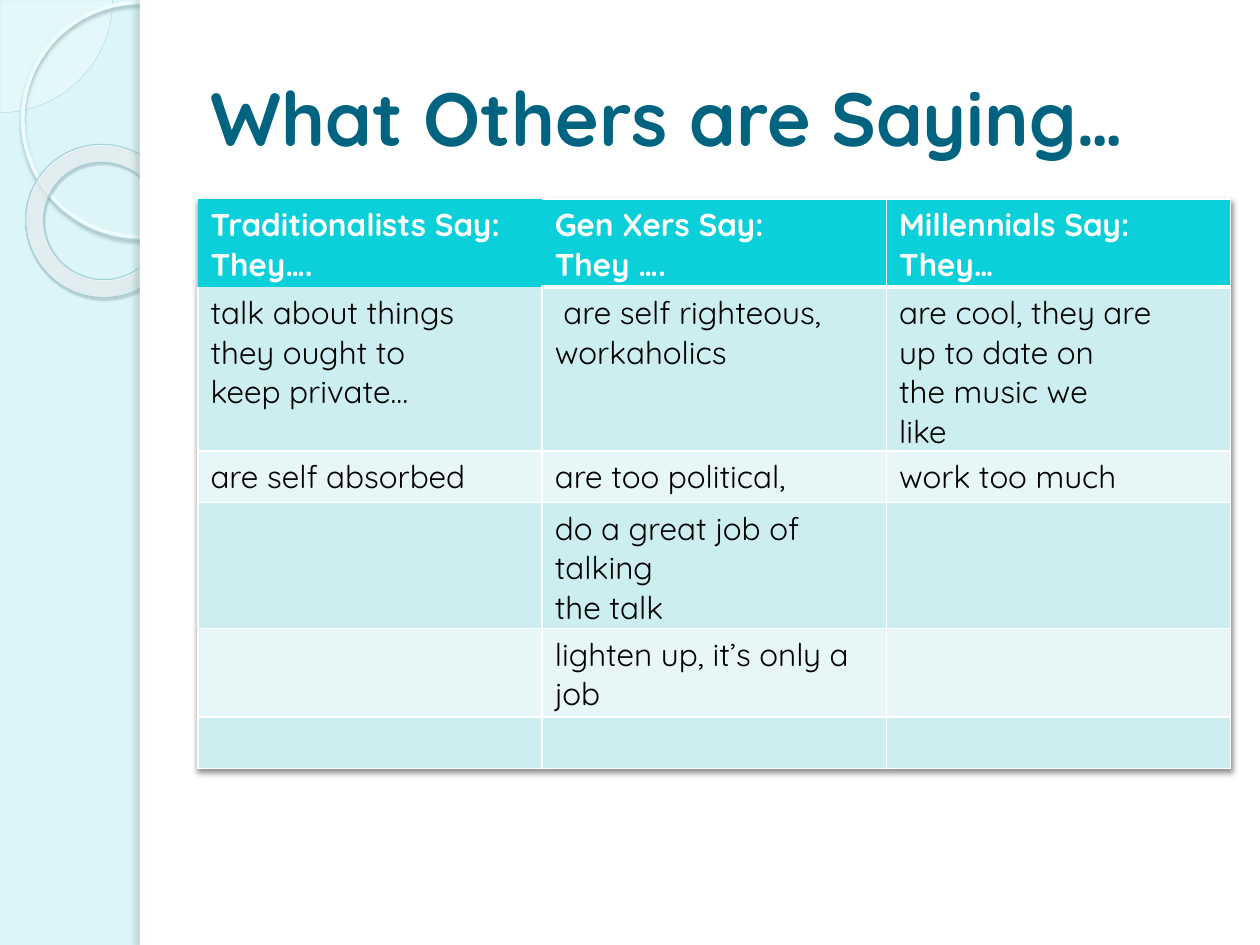
"""Build the "What Others are Saying…" slide with its comparison table."""
from dataclasses import dataclass
from typing import Optional

from lxml import etree
from pptx import Presentation
from pptx import util as u
from pptx.dml.color import RGBColor
from pptx.enum import shapes, text
from pptx.oxml import ns

FONT = "Quicksand"
WHITE = "FFFFFF"
HEADER_FILL = "0BD0D9"
BAND_FILLS = ("E7F7F8", "CCEEF1")
ROWS = (
    ("Traditionalists Say:\nThey….", "Gen Xers Say:\nThey ….", "Millennials Say:\nThey…"),
    ("talk about things\nthey ought to\nkeep private…", " are self righteous,\nworkaholics",
     "are cool, they are\nup to date on\nthe music we\nlike"),
    ("are self absorbed", "are too political,", "work too much"),
    ("", "do a great job of talking\nthe talk", ""),
    ("", "lighten up, it’s only a job", ""),
    ("", "", ""),
)


@dataclass(frozen=True)
class Shadow:
    color: str
    alpha: int
    blur: float
    distance: float
    angle: int


@dataclass(frozen=True)
class Decoration:
    kind: shapes.MSO_SHAPE
    place: tuple[float, float, float, float]
    fill: Optional[str] = None
    alpha: int = 100
    line: Optional[str] = None
    line_width: float = 0
    shadow: Optional[Shadow] = None
    adjustments: tuple[float, ...] = ()
    rotation: float = 0
    gradient: tuple[tuple[int, str, int], ...] = ()


DECORATIONS = (
    Decoration(shapes.MSO_SHAPE.PIE, (-2.27, -2.27, 4.54, 4.54), "F8FEFF", 33,
               "AFDBE2", 0.25, adjustments=(0, 54)),
    Decoration(shapes.MSO_SHAPE.OVAL, (0.46, 0.05, 4.72, 4.72), line="EDFCFF",
               line_width=2.15, shadow=Shadow("9CB9BE", 85, 2, 2, 90)),
    Decoration(shapes.MSO_SHAPE.DONUT, (0.51, 2.92, 3.12, 3.07), line="A1CFD6",
               line_width=0.58, shadow=Shadow("4B5E61", 35, 1, 1.2, 75),
               adjustments=(0.118,), rotation=38.6,
               gradient=((0, "F9FEFF", 70), (70, "FDFFFF", 55), (100, "9EF2FF", 60))),
    Decoration(shapes.MSO_SHAPE.RECTANGLE, (2.82, 0, 22.58, 19.05), WHITE),
    Decoration(shapes.MSO_SHAPE.RECTANGLE, (2.82, 0, 0.2, 19.05), WHITE,
               shadow=Shadow("6C7A7C", 25, 3, 3, 180)),
)


def rgb(color: str) -> RGBColor:
    """Turn a hex string into a colour."""
    return RGBColor.from_string(color)


def add_element(parent, tag: str, **attributes):
    """Append a DrawingML element with the given attributes."""
    element = etree.SubElement(parent, ns.qn(f"a:{tag}"))
    for name, value in attributes.items():
        element.set(name, str(value))
    return element


def add_color(parent, color: str, alpha: int = 100) -> None:
    """Append a colour with its opacity in percent."""
    element = add_element(parent, "srgbClr", val=color)
    if alpha < 100:
        add_element(element, "alpha", val=alpha * 1000)


def add_shadow(effects, shadow: Shadow) -> None:
    """Append an outer shadow to an effect list."""
    outer = add_element(effects, "outerShdw", blurRad=u.Pt(shadow.blur),
                        dist=u.Pt(shadow.distance), dir=shadow.angle * 60000,
                        algn="ctr", rotWithShape=0)
    add_color(outer, shadow.color, shadow.alpha)


def set_gradient(shape, stops: tuple[tuple[int, str, int], ...]) -> None:
    """Fill a shape with a circular gradient."""
    gradient = etree.Element(ns.qn("a:gradFill"))
    stop_list = add_element(gradient, "gsLst")
    for position, color, alpha in stops:
        add_color(add_element(stop_list, "gs", pos=position * 1000), color, alpha)
    circle = add_element(gradient, "path", path="circle")
    add_element(circle, "fillToRect", l=-408000, t=-50000, r=508000, b=150000)
    properties = shape.element.spPr
    properties.replace(properties.find(ns.qn("a:noFill")), gradient)


def draw_decoration(page, item: Decoration) -> None:
    """Draw one background shape."""
    shape = page.shapes.add_shape(item.kind, *map(u.Cm, item.place))
    shape.rotation = item.rotation
    shape.shadow.inherit = False
    for index, value in enumerate(item.adjustments):
        shape.adjustments[index] = value
    if item.fill:
        shape.fill.solid()
        shape.fill.fore_color.rgb = rgb(item.fill)
        color = shape.element.spPr.find(ns.qn("a:solidFill"))[0]
        add_element(color, "alpha", val=item.alpha * 1000)
    else:
        shape.fill.background()
    if item.gradient:
        set_gradient(shape, item.gradient)
    if item.line:
        shape.line.color.rgb = rgb(item.line)
        shape.line.width = u.Pt(item.line_width)
    else:
        shape.line.fill.background()
    if item.shadow:
        add_shadow(shape.element.spPr.find(ns.qn("a:effectLst")), item.shadow)


def style_paragraph(para, size: float, color: str, bold: bool) -> None:
    """Set the font of a paragraph."""
    para.font.name = FONT
    para.font.size = u.Pt(size)
    para.font.bold = bold
    para.font.color.rgb = rgb(color)


def add_title(page, words: str) -> None:
    """Add the slide title."""
    box = page.shapes.add_textbox(*map(u.Cm, (3.99, 0.76, 20.83, 3.18)))
    frame = box.text_frame
    frame.word_wrap = True
    frame.vertical_anchor = text.MSO_ANCHOR.MIDDLE
    frame.text = words
    style_paragraph(frame.paragraphs[0], 43, "00637F", True)


def border_width(row: int, column: int, side: str) -> int:
    """Give the border width in points, with none around the first header cell."""
    if (row, column) == (0, 0) or (row, column, side) in ((0, 1, "L"), (1, 0, "T")):
        return 0
    return 3 if (row, side) in ((0, "B"), (1, "T")) else 1


def fill_cell(cell, row: int, column: int, words: str) -> None:
    """Set the text, borders and fill of one table cell."""
    header = row == 0
    cell.text = words
    for para in cell.text_frame.paragraphs:
        style_paragraph(para, 18, WHITE if header else "000000", header)
    properties = cell._tc.get_or_add_tcPr()
    for side in "LRTB":
        width = border_width(row, column, side)
        line = add_element(properties, f"ln{side}", w=u.Pt(width))
        if width:
            add_color(add_element(line, "solidFill"), WHITE)
        else:
            add_element(line, "noFill")
    cell.fill.solid()
    cell.fill.fore_color.rgb = rgb(HEADER_FILL if header else BAND_FILLS[row % 2])


def add_comparison(page) -> None:
    """Add the table of sayings by generation."""
    place = map(u.Cm, (3.99, 4.01, 20.82, 6.24))
    frame = page.shapes.add_table(len(ROWS), len(ROWS[0]), *place)
    table = frame.table
    effects = etree.Element(ns.qn("a:effectLst"))
    add_shadow(effects, Shadow("000000", 45, 3, 2, 90))
    table._tbl.tblPr.insert(0, effects)
    for row, sayings in enumerate(ROWS):
        for column, words in enumerate(sayings):
            fill_cell(table.cell(row, column), row, column, words)
    frame.height = u.Cm(11.46)


def main() -> None:
    """Build and save the deck."""
    deck = Presentation()
    deck.slide_width, deck.slide_height = u.Cm(25.4), u.Cm(19.05)
    page = deck.slides.add_slide(deck.slide_layouts[6])
    page.background.fill.solid()
    page.background.fill.fore_color.rgb = rgb("DBF5F9")
    for item in DECORATIONS:
        draw_decoration(page, item)
    add_title(page, "What Others are Saying…")
    add_comparison(page)
    deck.save("out.pptx")


if __name__ == "__main__":
    main()
